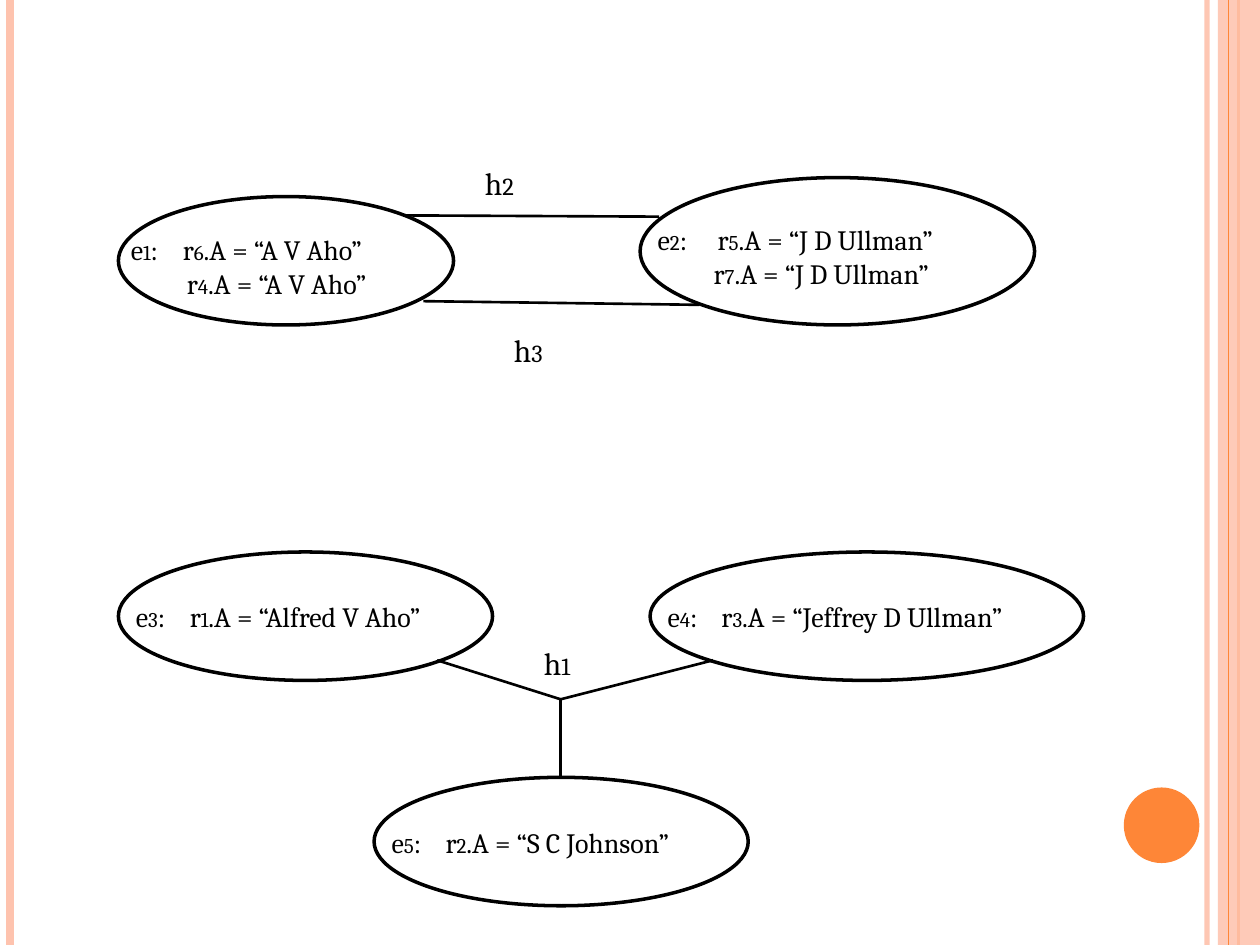
from dataclasses import dataclass
from typing import Any

from pptx import Presentation
from pptx import util as u
from pptx.dml import color
from pptx.enum import shapes, text
from pptx.oxml import ns, xmlchemy as xc

Pt = u.Pt
Kind = shapes.MSO_SHAPE


@dataclass(frozen=True)
class Theme:
    ink: str = "000000"
    peach: str = "FEC3AE"
    flame: str = "FE8637"
    face: str = "Cambria"
    body: int = 16
    small: int = 12
    label: int = 18
    digit: int = 14
    edge: float = 2
    link: float = 1.5


@dataclass(frozen=True)
class Box:
    left: float
    top: float
    width: float
    height: float


@dataclass(frozen=True)
class Line:
    start: tuple[float, float]
    end: tuple[float, float]
    color: str
    weight: float
    alpha: int = 100


@dataclass(frozen=True)
class Node:
    num: str
    oval: Box
    shift: tuple[float, float]
    tab: float
    rows: tuple[tuple[str, str], ...]


@dataclass(frozen=True)
class Label:
    num: str
    left: float
    top: float


THEME = Theme()
WIDE, HIGH = 720, 540
HANG = 32
LOW = (2.9, 23.8)


def rail(x: float, hue: str, weight: float, alpha: int = 100) -> Line:
    return Line((x, 0), (x, HIGH), hue, weight, alpha)


def edge(start: tuple[float, float], end: tuple[float, float]) -> Line:
    return Line(start, end, THEME.ink, THEME.link)


RAILS = (
    rail(689.8, THEME.peach, 3, 93),
    rail(5.8, THEME.peach, 4.5),
    rail(707.8, THEME.flame, 1.5),
)
INNER = rail(702, THEME.flame, 0.75)
BAND = Box(696, 0, 24, HIGH)
DOT = Box(642.2, 450, 43.2, 43.2)

NODES = (
    Node("1", Box(67.7, 112.3, 191.5, 73.4), (0, 17.3), 29.7,
         (("6", "A V Aho"), ("4", "A V Aho"))),
    Node("2", Box(365.8, 101.5, 225.4, 84.2), (2.9, 22.3), 34.3,
         (("5", "J D Ullman"), ("7", "J D Ullman"))),
    Node("3", Box(67.7, 315.4, 213.8, 73.4), LOW, 30.8,
         (("1", "Alfred V Aho"),)),
    Node("4", Box(371.5, 315.4, 247.7, 73.4), LOW, 30.8,
         (("3", "Jeffrey D Ullman"),)),
    Node("5", Box(213.8, 444.2, 213.8, 73.4), LOW, 30.8,
         (("2", "S C Johnson"),)),
)
HUB = (320.4, 399.6)
EDGES = (
    edge((230.4, 123.1), (376.6, 123.8)),
    edge((241.9, 172.1), (399.6, 174.2)),
    edge((249.8, 377.3), HUB),
    edge((407.5, 377.3), HUB),
    edge(HUB, (HUB[0], 444.2)),
)
LABELS = (
    Label("2", 270, 90),
    Label("3", 286.6, 185.8),
    Label("1", 303.8, 364.3),
)


def rgb(hue: str) -> color.RGBColor:
    return color.RGBColor.from_string(hue)


def fade(fill: Any, alpha: int) -> None:
    for tone in fill.iter(ns.qn("a:srgbClr")):
        xc.OxmlElement("a:alpha")
        item = tone.makeelement(ns.qn("a:alpha"), {"val": str(alpha * 1000)})
        tone.append(item)


def draw_line(pool: Any, line: Line) -> None:
    wire = pool.add_connector(
        shapes.MSO_CONNECTOR.STRAIGHT, *map(Pt, line.start + line.end))
    wire.line.color.rgb = rgb(line.color)
    wire.line.width = Pt(line.weight)
    props = wire.element.spPr
    if line.alpha < 100:
        fade(props, line.alpha)
    props.append(props.makeelement(ns.qn("a:effectLst"), {}))


def draw_shape(pool: Any, kind: Kind, box: Box, hue: str = "") -> Any:
    shape = pool.add_shape(
        kind, Pt(box.left), Pt(box.top), Pt(box.width), Pt(box.height))
    shape.shadow.inherit = False
    if hue:
        shape.fill.solid()
        shape.fill.fore_color.rgb = rgb(hue)
        shape.line.fill.background()
    else:
        shape.fill.background()
        shape.line.color.rgb = rgb(THEME.ink)
        shape.line.width = Pt(THEME.edge)
    return shape


def add_frame(pool: Any, box: Box) -> Any:
    frame = pool.add_textbox(
        Pt(box.left), Pt(box.top), Pt(box.width), Pt(box.height)).text_frame
    frame.word_wrap = True
    return frame


def add_run(para: Any, words: str, size: int) -> None:
    run = para.add_run()
    run.text = words
    run.font.name = THEME.face
    run.font.size = Pt(size)
    run.font.color.rgb = rgb(THEME.ink)


def set_tab(para: Any, stop: float) -> None:
    props = para._p.get_or_add_pPr()
    tabs = props.makeelement(ns.qn("a:tabLst"), {})
    tabs.append(tabs.makeelement(
        ns.qn("a:tab"), {"pos": str(int(Pt(stop))), "algn": "l"}))
    props.append(tabs)


def draw_node(pool: Any, node: Node) -> None:
    group = pool.add_group_shape().shapes
    oval = node.oval
    draw_shape(group, Kind.OVAL, oval)
    dx, dy = node.shift
    frame = add_frame(group, Box(
        oval.left + dx, oval.top + dy, oval.width - dx, 7 + 19.5 * len(node.rows)))
    for i, (num, name) in enumerate(node.rows):
        para = frame.add_paragraph() if i else frame.paragraphs[0]
        para.alignment = text.PP_ALIGN.LEFT
        if i:
            para._p.get_or_add_pPr().set("marL", str(int(Pt(HANG))))
        else:
            set_tab(para, node.tab)
            add_run(para, "e", THEME.body)
            add_run(para, node.num, THEME.small)
            add_run(para, ":\t", THEME.body)
        add_run(para, "r", THEME.body)
        add_run(para, num, THEME.small)
        add_run(para, f".A = “{name}”", THEME.body)


def draw_label(pool: Any, label: Label) -> None:
    para = add_frame(pool, Box(label.left, label.top, 33.1, 28.8)).paragraphs[0]
    add_run(para, "h", THEME.label)
    add_run(para, label.num, THEME.digit)


def main() -> None:
    deck = Presentation()
    deck.slide_width, deck.slide_height = Pt(WIDE), Pt(HIGH)
    pool = deck.slides.add_slide(deck.slide_layouts[6]).shapes
    for line in RAILS:
        draw_line(pool, line)
    band = draw_shape(pool, Kind.RECTANGLE, BAND, THEME.peach)
    fade(band.element.spPr, 87)
    draw_line(pool, INNER)
    draw_shape(pool, Kind.OVAL, DOT, THEME.flame)
    for node in NODES:
        draw_node(pool, node)
    for line in EDGES:
        draw_line(pool, line)
    for label in LABELS:
        draw_label(pool, label)
    deck.save("out.pptx")


if __name__ == "__main__":
    main()
